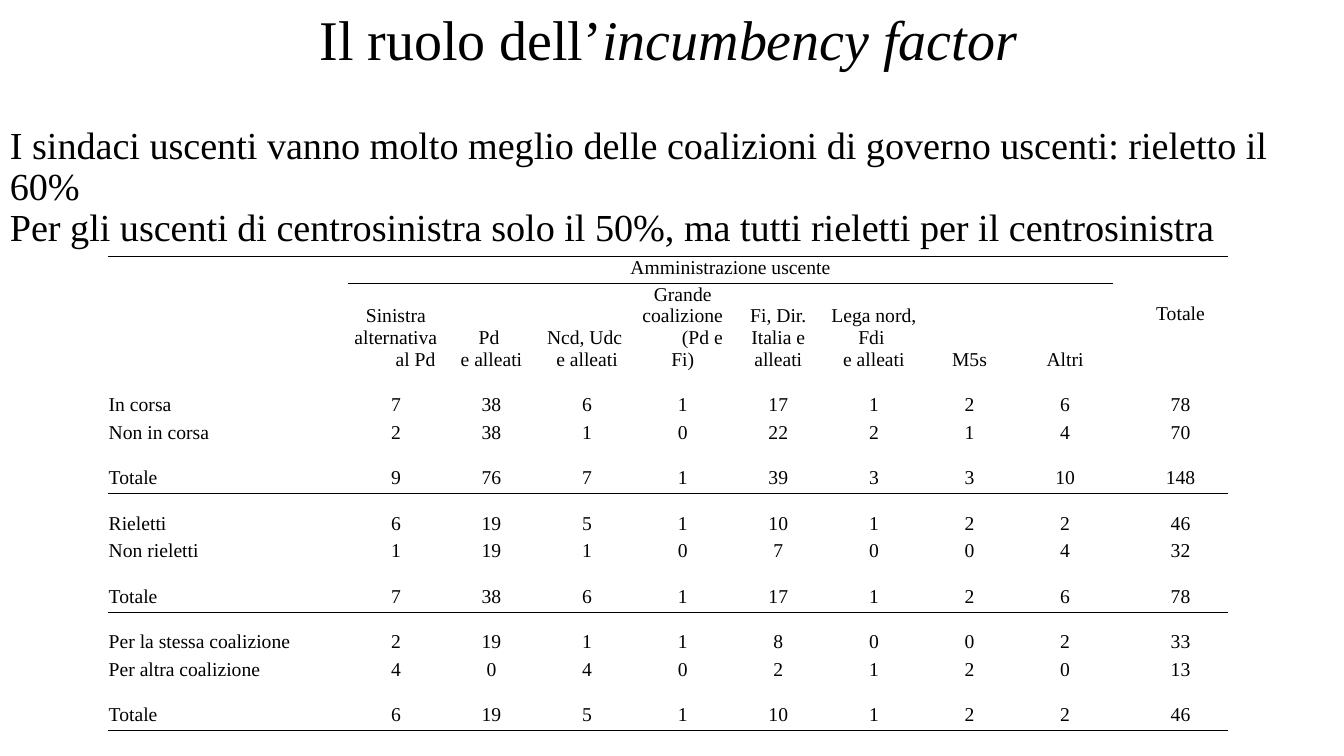
import lxml.etree
import pptx
import pptx.dml.color
import pptx.enum.text
import pptx.oxml.ns
import pptx.util

Pt = pptx.util.Pt
qn = pptx.oxml.ns.qn
ALIGN = pptx.enum.text.PP_ALIGN
ANCHOR = pptx.enum.text.MSO_ANCHOR
COLORS = {"ink": "000000"}
NO_STYLE = "{2D5ABB26-0587-4C30-8999-92F81FD0307C}"

# Table content: None is a spacer row
PARTIES = [
    ["Sinistra alternativa", "al Pd"],
    ["Pd ", "e alleati"],
    ["Ncd, Udc ", "e alleati"],
    ["Grande coalizione", "(Pd e", "Fi)"],
    ["Fi, Dir. Italia e alleati"],
    ["Lega nord, Fdi ", "e alleati"],
    ["M5s"],
    ["Altri"],
]
INDENTED = ("al Pd", "(Pd e")
ROWS = [
    None,
    ("In corsa", 7, 38, 6, 1, 17, 1, 2, 6, 78),
    ("Non in corsa", 2, 38, 1, 0, 22, 2, 1, 4, 70),
    None,
    ("Totale", 9, 76, 7, 1, 39, 3, 3, 10, 148),
    None,
    ("Rieletti", 6, 19, 5, 1, 10, 1, 2, 2, 46),
    ("Non rieletti", 1, 19, 1, 0, 7, 0, 0, 4, 32),
    None,
    ("Totale", 7, 38, 6, 1, 17, 1, 2, 6, 78),
    None,
    ("Per la stessa coalizione", 2, 19, 1, 1, 8, 0, 0, 2, 33),
    ("Per altra coalizione", 4, 0, 4, 0, 2, 1, 2, 0, 13),
    None,
    ("Totale", 6, 19, 5, 1, 10, 1, 2, 2, 46),
]
FIRST_PARTY, TOTAL = 2, 11
VALUE_COLS = [0, *range(FIRST_PARTY, FIRST_PARTY + len(PARTIES)), TOTAL]
COL_WIDTHS = [157.5, 14.2] + [68.3] * len(PARTIES) + [14.2, 68.3]
ROW_HEIGHTS = [19.5, 65.6] + [19.6 if row else 12.9 for row in ROWS]


class Slide:
    font = "Times New Roman"

    def __init__(self, prs):
        self.s = prs.slides.add_slide(prs.slide_layouts[6])

    def style(self, r, size):
        r.font.name = self.font
        r.font.size = Pt(size)
        r.font.color.rgb = pptx.dml.color.RGBColor.from_string(COLORS["ink"])

    def text(self, x, y, w, h, paragraphs, size, align=ALIGN.LEFT):
        """Each paragraph is a list of (text, italic) runs."""
        tf = self.s.shapes.add_textbox(Pt(x), Pt(y), Pt(w), Pt(h)).text_frame
        tf.word_wrap = True
        tf.vertical_anchor = ANCHOR.MIDDLE
        for i, runs in enumerate(paragraphs):
            p = tf.add_paragraph() if i else tf.paragraphs[0]
            p.alignment, p.line_spacing = align, 0.9
            for words, italic in runs:
                r = p.add_run()
                r.text = words
                self.style(r, size)
                r.font.italic = italic

    def table(self, x, y, widths, heights):
        frame = self.s.shapes.add_table(len(heights), len(widths), Pt(x), Pt(y),
                                        Pt(sum(widths)), Pt(sum(heights)))
        tbl = frame.table
        tbl.first_row = tbl.horz_banding = False
        frame._element.find(".//" + qn("a:tableStyleId")).text = NO_STYLE
        for col, width in zip(tbl.columns, widths):
            col.width = Pt(width)
        for row, height in zip(tbl.rows, heights):
            row.height = Pt(height)
        for cell in tbl.iter_cells():
            cell.fill.background()
            cell.margin_left = cell.margin_right = Pt(0.7)
            cell.margin_top = cell.margin_bottom = Pt(0.2)
            # Small type keeps empty rows at their height
            end = lxml.etree.SubElement(cell.text_frame.paragraphs[0]._p, qn("a:endParaRPr"))
            end.set("sz", "600")
        return tbl

    def cell(self, cell, lines, align=ALIGN.CENTER, anchor=ANCHOR.BOTTOM):
        cell.text = "\n".join(lines)
        cell.vertical_anchor = anchor
        cell.margin_bottom = Pt(3.4)
        for p in cell.text_frame.paragraphs:
            # A fixed line height keeps rows from growing
            p.alignment, p.line_spacing = align, Pt(15.5)
            if p.text in INDENTED:
                p._p.get_or_add_pPr().set("marL", str(Pt(28)))
            for r in p.runs:
                self.style(r, 14)

    def border(self, cells, side):
        for cell in cells:
            ln = lxml.etree.Element(qn("a:ln" + side), w=str(Pt(0.5)))
            fill = lxml.etree.SubElement(ln, qn("a:solidFill"))
            lxml.etree.SubElement(fill, qn("a:srgbClr"), val=COLORS["ink"])
            cell._tc.get_or_add_tcPr().insert(0, ln)


def main():
    prs = pptx.Presentation()
    prs.slide_width, prs.slide_height = Pt(960), Pt(540)
    s = Slide(prs)

    # Title
    s.text(63.4, 2.8, 828, 55.4,
           [[("Il ruolo dell’", False), ("incumbency factor", True)]], 40, ALIGN.CENTER)

    # Table header
    tbl = s.table(77, 183, COL_WIDTHS, ROW_HEIGHTS)
    last_party = VALUE_COLS[-2]
    tbl.cell(0, FIRST_PARTY).merge(tbl.cell(0, last_party))
    tbl.cell(0, TOTAL).merge(tbl.cell(1, TOTAL))
    s.cell(tbl.cell(0, FIRST_PARTY), ["Amministrazione uscente"])
    s.cell(tbl.cell(0, TOTAL), ["Totale"], anchor=ANCHOR.MIDDLE)
    for i, lines in enumerate(PARTIES):
        s.cell(tbl.cell(1, FIRST_PARTY + i), lines)
    top = list(tbl.rows[0].cells)
    s.border(top[FIRST_PARTY:last_party + 1], "B")
    s.border(top, "T")

    # Table body, with a rule under each total
    for i, row in enumerate(ROWS, 2):
        if row is None:
            continue
        for col, value in zip(VALUE_COLS, row):
            s.cell(tbl.cell(i, col), [str(value)], ALIGN.CENTER if col else ALIGN.LEFT)
        if row[0] == "Totale":
            s.border(tbl.rows[i].cells, "B")

    # Findings
    s.text(0, 78.5, 968.4, 111.6, [
        [("I sindaci uscenti vanno molto meglio delle coalizioni di governo uscenti: "
          "rieletto il 60%", False)],
        [("Per gli uscenti di centrosinistra solo il 50%, ma tutti rieletti per il "
          "centrosinistra", False)],
    ], 27.3)

    prs.save("out.pptx")


if __name__ == "__main__":
    main()
